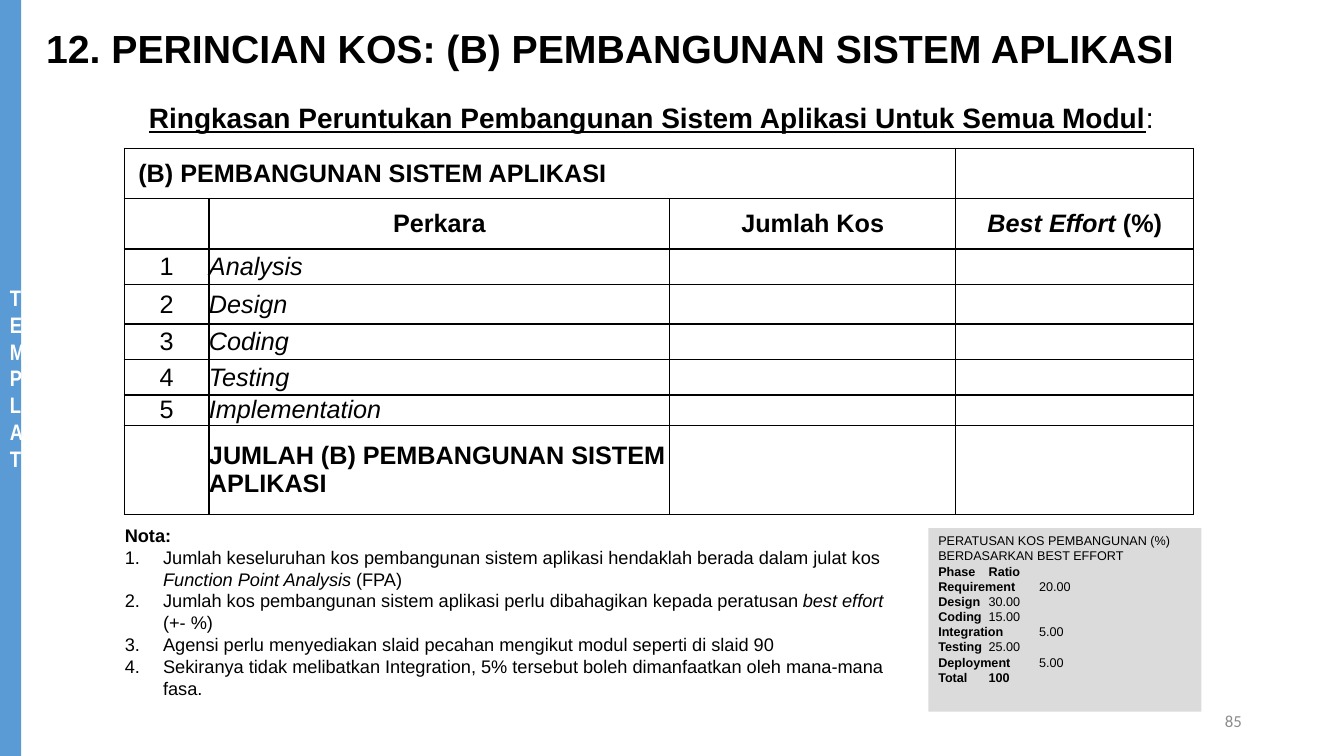
from dataclasses import dataclass

import pptx
import pptx.dml.color
import pptx.enum.shapes
import pptx.enum.text
import pptx.oxml
import pptx.oxml.ns
import pptx.slide
import pptx.util
from lxml import etree

ALIGN = pptx.enum.text.PP_ALIGN
ANCHOR = pptx.enum.text.MSO_ANCHOR
GRID_COLUMNS, GRID_ROWS = 160, 90


@dataclass(frozen=True)
class Theme:
    font: str = "Arial"
    band_font: str = "Arial Narrow"
    number_font: str = "Calibri"
    black: str = "000000"
    white: str = "FFFFFF"
    band: str = "5B9BD5"
    panel: str = "DBDBDB"
    muted: str = "8C8C8C"
    title: int = 28
    subtitle: int = 20
    table: int = 18
    band_text: int = 16
    note: int = 13
    number: int = 12
    ratio: int = 9
    border: int = 1


@dataclass
class SlideBuilder:
    theme: Theme
    slide: pptx.slide.Slide
    width: int
    height: int

    def across(self, columns):
        return round(self.width * columns / GRID_COLUMNS)

    def down(self, rows):
        return round(self.height * rows / GRID_ROWS)

    def box(self, left, top, width, height):
        return self.across(left), self.down(top), self.across(width), self.down(height)

    def mark(self, font, marks):
        if "b" in marks:
            font.bold = True
        if "i" in marks:
            font.italic = True
        if "u" in marks:
            font.underline = True

    def paragraph(self, paragraph, runs, size, marks="", align=ALIGN.LEFT, font=None, color=None):
        paragraph.alignment = align
        paragraph.font.name = font or self.theme.font
        paragraph.font.size = pptx.util.Pt(size)
        paragraph.font.color.rgb = pptx.dml.color.RGBColor.from_string(color or self.theme.black)
        self.mark(paragraph.font, marks)
        for text, run_marks in [(runs, "")] if isinstance(runs, str) else runs:
            run = paragraph.add_run()
            run.text = text
            self.mark(run.font, run_marks)
        return paragraph

    def fill_frame(self, frame, paragraphs, size, anchor=ANCHOR.TOP, **style):
        frame.word_wrap = True
        frame.vertical_anchor = anchor
        added = []
        for index, runs in enumerate(paragraphs):
            paragraph = frame.add_paragraph() if index else frame.paragraphs[0]
            added.append(self.paragraph(paragraph, runs, size, **style))
        return added

    def text(self, box, paragraphs, size, **style):
        shape = self.slide.shapes.add_textbox(*self.box(*box))
        return self.fill_frame(shape.text_frame, paragraphs, size, **style)

    def panel(self, box, fill, paragraphs, size, **style):
        kind = pptx.enum.shapes.MSO_SHAPE.RECTANGLE
        shape = self.slide.shapes.add_shape(kind, *self.box(*box))
        shape.shadow.inherit = False
        shape.fill.solid()
        shape.fill.fore_color.rgb = pptx.dml.color.RGBColor.from_string(fill)
        shape.line.fill.background()
        return self.fill_frame(shape.text_frame, paragraphs, size, **style)

    def number(self, paragraph):
        properties = paragraph._p.get_or_add_pPr()
        indent = pptx.util.Inches(0.38)
        properties.set("marL", str(int(indent)))
        properties.set("indent", str(-int(indent)))
        bullet = etree.Element(pptx.oxml.ns.qn("a:buAutoNum"), type="arabicPeriod")
        properties.insert(0, bullet)

    def border(self, cell):
        properties = cell._tc.get_or_add_tcPr()
        width = int(pptx.util.Pt(self.theme.border))
        for side in ("lnL", "lnR", "lnT", "lnB"):
            properties.append(pptx.oxml.parse_xml(
                f'<a:{side} {pptx.oxml.ns.nsdecls("a")} w="{width}">'
                f'<a:solidFill><a:srgbClr val="{self.theme.black}"/></a:solidFill></a:{side}>'))

    def table(self, left, top, columns, rows, contents):
        frame = self.slide.shapes.add_table(
            len(rows), len(columns), *self.box(left, top, sum(columns), sum(rows)))
        table = frame.table
        table.first_row = table.horz_banding = False
        for column, width in zip(table.columns, columns):
            column.width = self.across(width)
        for row, height in zip(table.rows, rows):
            row.height = self.down(height)
        for cell in table.iter_cells():
            cell.margin_left = cell.margin_right = cell.margin_top = cell.margin_bottom = 0
            cell.vertical_anchor = ANCHOR.MIDDLE
            self.border(cell)
            cell.fill.background()
        for (row, column), (runs, marks, align) in contents.items():
            paragraph = table.cell(row, column).text_frame.paragraphs[0]
            self.paragraph(paragraph, runs, self.theme.table, marks, align)
        return table


PHASES = ["Analysis", "Design", "Coding", "Testing", "Implementation"]
RATIOS = [("Requirement", "20.00"), ("Design", "30.00"), ("Coding", "15.00"),
          ("Integration", "5.00"), ("Testing", "25.00"), ("Deployment", "5.00")]
NOTES = [
    [("Jumlah keseluruhan kos pembangunan sistem aplikasi hendaklah berada dalam julat kos ", ""),
     ("Function Point Analysis", "i"), (" (FPA)", "")],
    [("Jumlah kos pembangunan sistem aplikasi perlu dibahagikan kepada peratusan ", ""),
     ("best effort", "i"), (" (+- %)", "")],
    "Agensi perlu menyediakan slaid pecahan mengikut modul seperti di slaid 90",
    "Sekiranya tidak melibatkan Integration, 5% tersebut boleh dimanfaatkan oleh mana-mana fasa.",
]


def main():
    presentation = pptx.Presentation()
    presentation.slide_width = pptx.util.Inches(13.33)
    presentation.slide_height = pptx.util.Inches(7.5)
    slide = presentation.slides.add_slide(presentation.slide_layouts[6])
    theme = Theme()
    builder = SlideBuilder(theme, slide, presentation.slide_width, presentation.slide_height)

    builder.panel((0, 0, 2.52, GRID_ROWS), theme.band, ["TEMPLAT"], theme.band_text,
                  anchor=ANCHOR.MIDDLE, marks="b", align=ALIGN.CENTER,
                  font=theme.band_font, color=theme.white)
    subtitle = builder.text(
        (16.44, 11.4, 123.12, 5.28),
        [[("Ringkasan Peruntukan Pembangunan Sistem Aplikasi Untuk Semua Modul", "bu"), (": ", "")]],
        theme.subtitle, align=ALIGN.CENTER)
    subtitle[0].space_before = pptx.util.Pt(4)
    title = builder.text((4.32, 2.28, 155.68, 7.56),
                         ["12. PERINCIAN KOS: (B) PEMBANGUNAN SISTEM APLIKASI"],
                         theme.title, anchor=ANCHOR.MIDDLE, marks="b")
    title[0].line_spacing = 0.9

    contents = {
        (0, 0): ("(B) PEMBANGUNAN SISTEM APLIKASI", "b", ALIGN.LEFT),
        (1, 1): ("Perkara", "b", ALIGN.CENTER),
        (1, 2): ("Jumlah Kos", "b", ALIGN.CENTER),
        (1, 3): ([("Best Effort ", "i"), ("(%)", "")], "b", ALIGN.CENTER),
        (7, 1): ("JUMLAH (B) PEMBANGUNAN SISTEM APLIKASI", "b", ALIGN.LEFT),
    }
    for order, phase in enumerate(PHASES, 1):
        contents[order + 1, 0] = (str(order), "", ALIGN.CENTER)
        contents[order + 1, 1] = (phase, "i", ALIGN.LEFT)
    table = builder.table(14.8, 17.64, [10.08, 54.84, 34.08, 28.32],
                          [6, 6, 4.25, 4.68, 4.25, 4.2, 3.48, 10.68], contents)
    table.cell(0, 0).merge(table.cell(0, 2))
    table.cell(0, 0).margin_left = builder.across(1.67)

    ratios = [[(f"{phase}\t", "b"), (ratio, "")] for phase, ratio in RATIOS]
    builder.panel((110.52, 62.88, 32.52, 21.84), theme.panel,
                  ["PERATUSAN KOS PEMBANGUNAN (%) BERDASARKAN BEST EFFORT",
                   [("Phase\tRatio", "b")], *ratios, [("Total\t100", "b")]], theme.ratio)
    notes = builder.text((13.68, 61.8, 95.76, 22.2), [[("Nota:", "b")], *NOTES], theme.note)
    for note in notes[1:]:
        builder.number(note)
    builder.text((113.04, 83.4, 36, 4.8), ["85"], theme.number, anchor=ANCHOR.MIDDLE,
                 align=ALIGN.RIGHT, font=theme.number_font, color=theme.muted)
    presentation.save("out.pptx")


if __name__ == "__main__":
    main()
